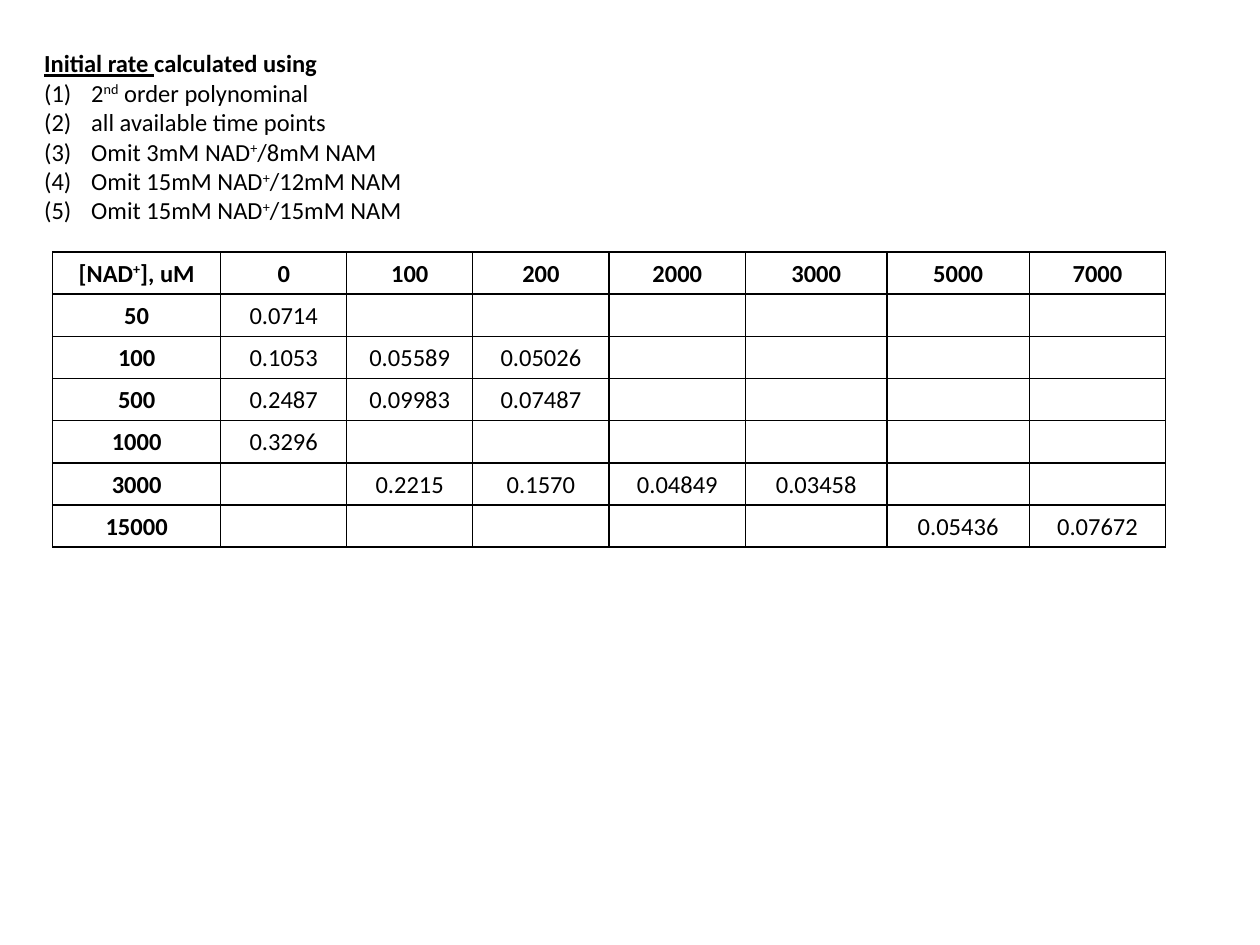
from dataclasses import dataclass

from lxml import etree
from pptx import Presentation
from pptx.dml.color import RGBColor
from pptx.enum import text
from pptx.oxml import ns
from pptx.util import Cm, Pt


@dataclass(frozen=True)
class Theme:
    font: str = "Calibri"
    size: int = 14
    ink: str = "000000"
    border: float = 1


THEME = Theme()

# Text between carets is superscript
HEADING = ("Initial rate ", "calculated using")
CONDITIONS = [
    "2^nd^ order polynominal",
    "all available time points",
    "Omit 3mM NAD^+^/8mM NAM",
    "Omit 15mM NAD^+^/12mM NAM",
    "Omit 15mM NAD^+^/15mM NAM",
]

RATES = [
    ["[NAD^+^], uM", "0", "100", "200", "2000", "3000", "5000", "7000"],
    ["50", "0.0714", "", "", "", "", "", ""],
    ["100", "0.1053", "0.05589", "0.05026", "", "", "", ""],
    ["500", "0.2487", "0.09983", "0.07487", "", "", "", ""],
    ["1000", "0.3296", "", "", "", "", "", ""],
    ["3000", "", "0.2215", "0.1570", "0.04849", "0.03458", "", ""],
    ["15000", "", "", "", "", "", "0.05436", "0.07672"],
]
COLUMN_WIDTHS = [3.39, 2.54, 2.54, 2.75, 2.75, 2.85, 2.87, 2.75]
ROW_HEIGHT = 0.85


def add_span(para, words, bold=False, underline=False, raised=False):
    span = para.add_run()
    span.text = words
    font = span.font
    font.name, font.size = THEME.font, Pt(THEME.size)
    font.bold, font.underline = bold, underline
    font.color.rgb = RGBColor.from_string(THEME.ink)
    if raised:
        span._r.get_or_add_rPr().set("baseline", "30000")


def write_marked(para, marked, bold=False):
    for index, words in enumerate(marked.split("^")):
        if words:
            add_span(para, words, bold=bold, raised=index % 2 == 1)


def number_paragraph(para):
    props = para._p.get_or_add_pPr()
    indent = Cm(0.95)
    props.set("marL", str(indent))
    props.set("indent", str(-indent))
    etree.SubElement(props, ns.qn("a:buFont"), typeface="+mj-lt")
    etree.SubElement(props, ns.qn("a:buAutoNum"), type="arabicParenBoth")


def add_conditions(page):
    box = page.shapes.add_textbox(Cm(0.64), Cm(0.85), Cm(7.8), Cm(3.84))
    frame = box.text_frame
    frame.word_wrap = False
    frame.auto_size = text.MSO_AUTO_SIZE.SHAPE_TO_FIT_TEXT
    heading = frame.paragraphs[0]
    add_span(heading, HEADING[0], bold=True, underline=True)
    add_span(heading, HEADING[1], bold=True)
    for condition in CONDITIONS:
        para = frame.add_paragraph()
        number_paragraph(para)
        write_marked(para, condition)


def draw_borders(cell):
    props = cell._tc.get_or_add_tcPr()
    for side in ("lnL", "lnR", "lnT", "lnB"):
        line = etree.SubElement(props, ns.qn(f"a:{side}"), w=str(Pt(THEME.border)))
        fill = etree.SubElement(line, ns.qn("a:solidFill"))
        etree.SubElement(fill, ns.qn("a:srgbClr"), val=THEME.ink)


def format_cell(cell, marked, bold):
    draw_borders(cell)
    cell.fill.background()
    cell.vertical_anchor = text.MSO_ANCHOR.MIDDLE
    cell.margin_left = cell.margin_right = cell.margin_top = Cm(0.03)
    cell.margin_bottom = 0
    para = cell.text_frame.paragraphs[0]
    para.alignment = text.PP_ALIGN.CENTER
    write_marked(para, marked, bold)


def add_rate_table(page):
    rows, columns = len(RATES), len(COLUMN_WIDTHS)
    table = page.shapes.add_table(
        rows, columns, Cm(1.06), Cm(5.08),
        Cm(sum(COLUMN_WIDTHS)), Cm(ROW_HEIGHT * rows),
    ).table
    table.first_row = table.horz_banding = False
    for column, width in zip(table.columns, COLUMN_WIDTHS):
        column.width = Cm(width)
    for r, values in enumerate(RATES):
        table.rows[r].height = Cm(ROW_HEIGHT)
        for c, value in enumerate(values):
            format_cell(table.cell(r, c), value, bold=r == 0 or c == 0)


def main():
    deck = Presentation()
    deck.slide_width, deck.slide_height = Cm(25.4), Cm(19.05)
    page = deck.slides.add_slide(deck.slide_layouts.get_by_name("Blank"))
    add_rate_table(page)
    add_conditions(page)
    deck.save("out.pptx")


if __name__ == "__main__":
    main()
